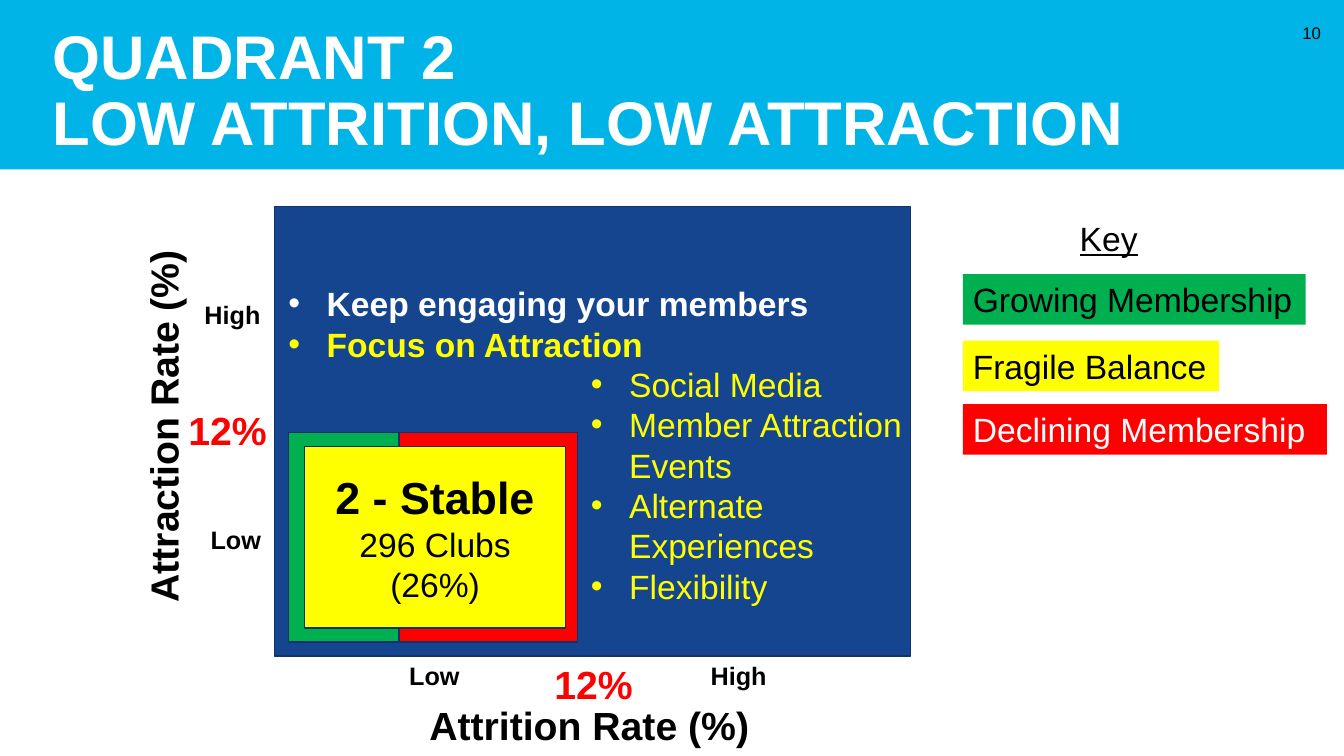
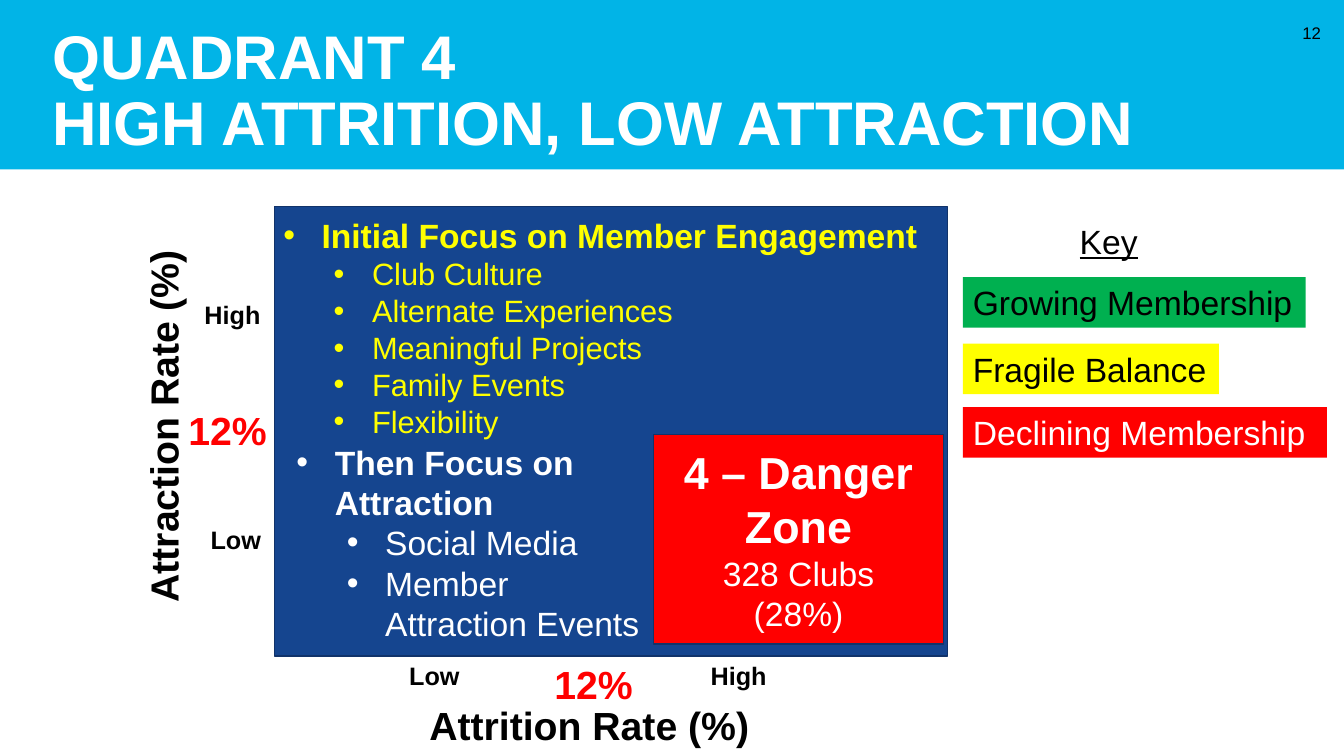
from dataclasses import dataclass
from lxml.etree import SubElement
from pptx import Presentation
from pptx.dml.color import RGBColor
from pptx.enum.shapes import MSO_SHAPE
from pptx.enum.text import MSO_ANCHOR, MSO_AUTO_SIZE, PP_ALIGN
from pptx.oxml.ns import qn
from pptx.util import Inches, Pt


@dataclass(frozen=True)
class Theme:
    font: str = "Arial"
    sky: str = "01B4E7"
    navy: str = "15458F"
    edge: str = "11336A"
    green: str = "00B050"
    yellow: str = "FFFF00"
    red: str = "FF0000"
    white: str = "FFFFFF"
    black: str = "000000"
    title: int = 44
    head: int = 32
    axis: int = 28
    body: int = 24
    sub: int = 22
    tick: int = 18
    page: int = 12


T = Theme()
CELL = 0.1  # inches per grid column and row


@dataclass(frozen=True)
class Box:
    """Area in grid cells; at() gives an area measured from its corner."""
    x: float
    y: float
    w: float
    h: float

    def at(self, x, y, w, h):
        return Box(self.x + x, self.y + y, w, h)

    def emu(self):
        return [Inches(n * CELL) for n in (self.x, self.y, self.w, self.h)]


PAGE = Box(0, 0, 133.3, 75)
BAND = PAGE.at(0, 0, PAGE.w, 16.8)
FIT = {"auto_size": MSO_AUTO_SIZE.SHAPE_TO_FIT_TEXT}


# Shared helpers
def apply(item, form):
    for name, value in form.items():
        setattr(item, name, value)


def move(shape, box):
    apply(shape, dict(zip(("left", "top", "width", "height"), box.emu())))


def write(par, text, size, color, **form):
    run = par.add_run()
    run.text = text
    apply(run.font, {"name": T.font, "size": Pt(size), **form})
    run.font.color.rgb = RGBColor.from_string(color)


def rect(slide, box, fill, edge=None):
    shape = slide.shapes.add_shape(MSO_SHAPE.RECTANGLE, *box.emu())
    shape.shadow.inherit = False
    shape.fill.solid()
    shape.fill.fore_color.rgb = RGBColor.from_string(fill)
    if edge:
        shape.line.color.rgb = RGBColor.from_string(edge)
        shape.line.width = Pt(1)
    else:
        shape.line.fill.background()
    return shape


def label(slide, box, text, size, color=T.black, fill=None, turn=0, **form):
    shape = slide.shapes.add_textbox(*box.emu())
    shape.rotation = turn
    if fill:
        shape.fill.solid()
        shape.fill.fore_color.rgb = RGBColor.from_string(fill)
    apply(shape.text_frame, {"word_wrap": False, **FIT})
    write(shape.text_frame.paragraphs[0], text, size, color, **form)


def pars(frame, items):
    for i, item in enumerate(items):
        yield (frame.add_paragraph() if i else frame.paragraphs[0]), item


# Band and title place, set once on the master
def brand(deck, slide):
    master = deck.slide_master
    band = rect(slide, BAND, T.sky).element
    band.nvSpPr.cNvPr.id = 20
    master.shapes.element.insert(2, band)
    move(master.placeholders[0], BAND.at(4.2, 0, 125.8, BAND.h))


# Two-line title and page number
def header(slide, lines, page):
    frame = slide.shapes.title.text_frame
    apply(frame, {"vertical_anchor": MSO_ANCHOR.BOTTOM, "word_wrap": True,
                  "auto_size": MSO_AUTO_SIZE.NONE,
                  "margin_left": Inches(0.1), "margin_right": Inches(0.1),
                  "margin_top": 0, "margin_bottom": Inches(0.1)})
    par = frame.paragraphs[0]
    apply(par, {"alignment": PP_ALIGN.LEFT, "line_spacing": 0.9})
    for i, line in enumerate(lines):
        if i:
            par.add_line_break()
        write(par, line, T.title, T.white, bold=True)

    num = slide.shapes.add_textbox(*BAND.at(127.4, 1.3, 4.6, 4).emu())
    apply(num.text_frame, {"word_wrap": True,
                           "vertical_anchor": MSO_ANCHOR.MIDDLE})
    par = num.text_frame.paragraphs[0]
    par.alignment = PP_ALIGN.RIGHT
    write(par, page, T.page, T.black)


# Blue panel behind the lists, with its axis labels
def panel(slide, box):
    back = rect(slide, box, T.navy, T.edge)
    slide.shapes.element.insert(2, back.element)
    foot = 44.5
    label(slide, box.at(14.4, 48.6, 34.1, 5.7), "Attrition Rate (%)",
          T.axis, bold=True)
    label(slide, box.at(-29.7, 18.7, 37.4, 5.7), "Attraction Rate (%)",
          T.axis, turn=270, bold=True)
    for x, y in ((-9.5, 19.3), (26.8, foot)):
        label(slide, box.at(x, y, 9.9, 5.7), "12%", T.axis, T.red, bold=True)
    for text, w, spots in (("High", 7.6, ((42.3, foot), (-7.9, 8.7))),
                           ("Low", 7.1, ((12.4, foot), (-7.3, 31)))):
        for x, y in spots:
            label(slide, box.at(x, y, w, 4), text, T.tick, bold=True)


# Colour key
def legend(slide, box):
    label(slide, box.at(10.6, 0, 7.8, 5), "Key", T.body, underline=True)
    for text, y, w, fill, color in (
            ("Growing Membership", 6.1, 34, T.green, T.black),
            ("Fragile Balance", 12.7, 25.4, T.yellow, T.black),
            ("Declining Membership", 19, 36.1, T.red, T.white)):
        label(slide, box.at(0, y, w, 5), text, T.body, color, fill)


# Bulleted list: items are (level, text, size, colour)
def bullets(hold, box, items):
    move(hold, box)
    frame = hold.text_frame
    apply(frame, {"word_wrap": True, "vertical_anchor": MSO_ANCHOR.TOP, **FIT})
    for par, (level, text, size, color) in pars(frame, items):
        apply(par, {"level": level, "space_before": Pt(0), "line_spacing": 1.0,
                    "alignment": PP_ALIGN.LEFT})
        write(par, text, size, color, bold=level == 0)
        props = par._p.get_or_add_pPr()
        props.set("marL", str(Inches(0.38 + 0.5 * level)))
        props.set("indent", str(-Inches(0.38)))
        SubElement(props, qn("a:buFont")).set("typeface", T.font)
        SubElement(props, qn("a:buChar")).set("char", "•")


# Quadrant card: bold name over its counts
def card(slide, box, fill, color, name, *facts):
    frame = rect(slide, box, fill, T.edge).text_frame
    apply(frame, {"word_wrap": True, "vertical_anchor": MSO_ANCHOR.MIDDLE})
    for par, text in pars(frame, (name, *facts)):
        par.alignment = PP_ALIGN.CENTER
        top = text == name
        write(par, text, T.head if top else T.body, color, bold=top)


def stable(slide):
    box = PAGE.at(27.2, 20.5, 63.1, 44.6)
    header(slide, ("QUADRANT 2", "LOW ATTRITION, LOW ATTRACTION"), "10")
    panel(slide, box)
    legend(slide, PAGE.at(95.5, 21.1, 36.1, 24))
    tips = ("Social Media", "Member Attraction Events",
            "Alternate Experiences", "Flexibility")
    bullets(slide.placeholders[1], box.at(0.4, 7.1, 66.7, 33.3),
            [(0, "Keep engaging your members", T.body, T.white),
             (0, "Focus on Attraction", T.body, T.yellow),
             *((6, tip, T.body, T.yellow) for tip in tips)])
    for x, w, fill in ((1.4, 11, T.green), (12.4, 17.7, T.red)):
        rect(slide, box.at(x, 22.4, w, 20.8), fill, T.edge)
    card(slide, box.at(3, 23.8, 25.9, 18), T.yellow, T.black,
         "2 - Stable", "296 Clubs", "(26%)")


def danger(slide):
    box = PAGE.at(27.2, 20.5, 66.8, 44.6)
    header(slide, ("QUADRANT 4", "HIGH ATTRITION, LOW ATTRACTION"), "12")
    panel(slide, box)
    legend(slide, PAGE.at(95.5, 21.4, 36.1, 24))
    tips = ("Club Culture", "Alternate Experiences", "Meaningful Projects",
            "Family Events", "Flexibility")
    bullets(slide.placeholders[1], box.at(-0.1, 0.3, 67.2, 27.6),
            [(0, "Initial Focus on Member Engagement", T.body, T.yellow),
             *((1, tip, T.sub, T.yellow) for tip in tips)])
    tips = ("Social Media", "Member Attraction Events")
    bullets(slide.placeholders[2], box.at(1.2, 22.8, 37.2, 21.2),
            [(0, "Then Focus on Attraction", T.body, T.white),
             *((1, tip, T.body, T.white) for tip in tips)])
    card(slide, box.at(37.6, 22.6, 28.8, 20.8), T.red, T.white,
         "4 – Danger Zone", "328 Clubs", "(28%)")


def main():
    deck = Presentation()
    _, _, deck.slide_width, deck.slide_height = PAGE.emu()
    one, two = (deck.slides.add_slide(deck.slide_layouts[i]) for i in (1, 3))
    brand(deck, one)
    stable(one)
    danger(two)
    deck.save("out.pptx")


if __name__ == "__main__":
    main()
